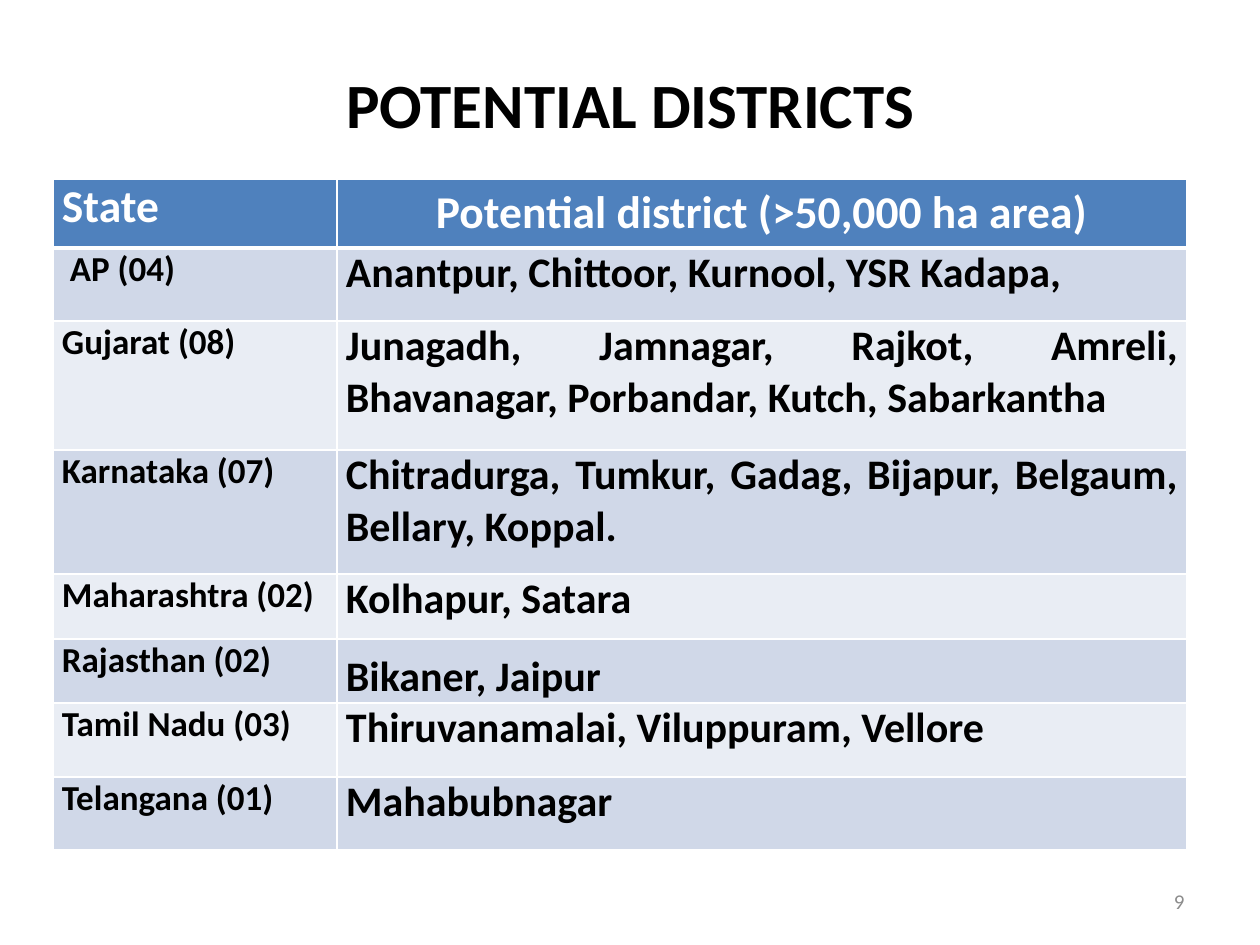
from lxml import etree
from pptx import Presentation
from pptx.dml.color import RGBColor
from pptx.enum.text import MSO_ANCHOR, PP_ALIGN
from pptx.oxml.ns import qn
from pptx.util import Pt

TOP, MIDDLE, BOTTOM = MSO_ANCHOR.TOP, MSO_ANCHOR.MIDDLE, MSO_ANCHOR.BOTTOM
LEFT, CENTER, RIGHT, JUSTIFY = PP_ALIGN.LEFT, PP_ALIGN.CENTER, PP_ALIGN.RIGHT, PP_ALIGN.JUSTIFY
PX = 914400 / 126
COLORS = {"black": "000000", "white": "FFFFFF", "gray": "8C8C8C",
          "head": "4F81BD", "odd": "D0D8E8", "even": "E9EDF4"}
HEADS = ["State", "Potential district (>50,000 ha area)"]
STATES = [
    (" AP (04)", "Anantpur, Chittoor, Kurnool, YSR Kadapa, ", 73, JUSTIFY, TOP),
    ("Gujarat (08)", "Junagadh, Jamnagar, Rajkot, Amreli, Bhavanagar, Porbandar, Kutch, Sabarkantha", 129, JUSTIFY, TOP),
    ("Karnataka (07)", "Chitradurga, Tumkur, Gadag, Bijapur, Belgaum, Bellary, Koppal.", 124, JUSTIFY, TOP),
    ("Maharashtra (02)", "Kolhapur, Satara", 65, LEFT, TOP),
    ("Rajasthan (02)", "Bikaner, Jaipur", 64, LEFT, BOTTOM),
    ("Tamil Nadu (03)", "Thiruvanamalai, Viluppuram, Vellore", 74, JUSTIFY, TOP),
    ("Telangana (01)", "Mahabubnagar", 73, JUSTIFY, TOP),
]


def write(frame, text, size, color, align, bold=True):
    frame.text = text
    line = frame.paragraphs[0]
    line.alignment = align
    font = line.runs[0].font
    font.name, font.size, font.bold = "Calibri", Pt(size), bold
    font.color.rgb = RGBColor.from_string(COLORS[color])


def border(cell, side, width):
    edge = etree.SubElement(cell._tc.get_or_add_tcPr(), qn("a:ln" + side), w=str(Pt(width)))
    fill = etree.SubElement(edge, qn("a:solidFill"))
    etree.SubElement(fill, qn("a:srgbClr"), val=COLORS["white"])


deck = Presentation()
deck.slide_width, deck.slide_height = round(1260 * PX), round(945 * PX)
slide = deck.slides.add_slide(deck.slide_layouts[6])

for text, box, size, color, align, bold in [
    ("POTENTIAL DISTRICTS", (32, 38, 1197, 130), 36, "black", CENTER, True),
    ("9", (903, 876, 294, 50), 12, "gray", RIGHT, False),
]:
    frame = slide.shapes.add_textbox(*[round(n * PX) for n in box]).text_frame
    frame.word_wrap = True
    frame.vertical_anchor = MIDDLE
    write(frame, text, size, color, align, bold)

rows = [(*HEADS, 69, CENTER, TOP)] + STATES
box = [round(n * PX) for n in (53, 179, 1134, 671)]
table = slide.shapes.add_table(len(rows), 2, *box).table
for col, width in zip(table.columns, (284, 850)):
    col.width = round(width * PX)

for r, (state, names, height, align, anchor) in enumerate(rows):
    table.rows[r].height = round(height * PX)
    shade = "head" if r == 0 else "odd" if r % 2 else "even"
    for c, text in enumerate((state, names)):
        cell = table.cell(r, c)
        if r or c == 0:
            cell.margin_left = cell.margin_right = round(9 * PX)
            cell.margin_top = cell.margin_bottom = 0
        size = 26 if r == 0 else (20, 24)[c]
        write(cell.text_frame, text, size, "black" if r else "white", align if c else JUSTIFY)
        cell.vertical_anchor = anchor if c else TOP
        for side in "LRTB":
            border(cell, side, 3 if (r, side) in [(0, "B"), (1, "T")] else 1)
        cell.fill.solid()
        cell.fill.fore_color.rgb = RGBColor.from_string(COLORS[shade])

deck.save("out.pptx")
